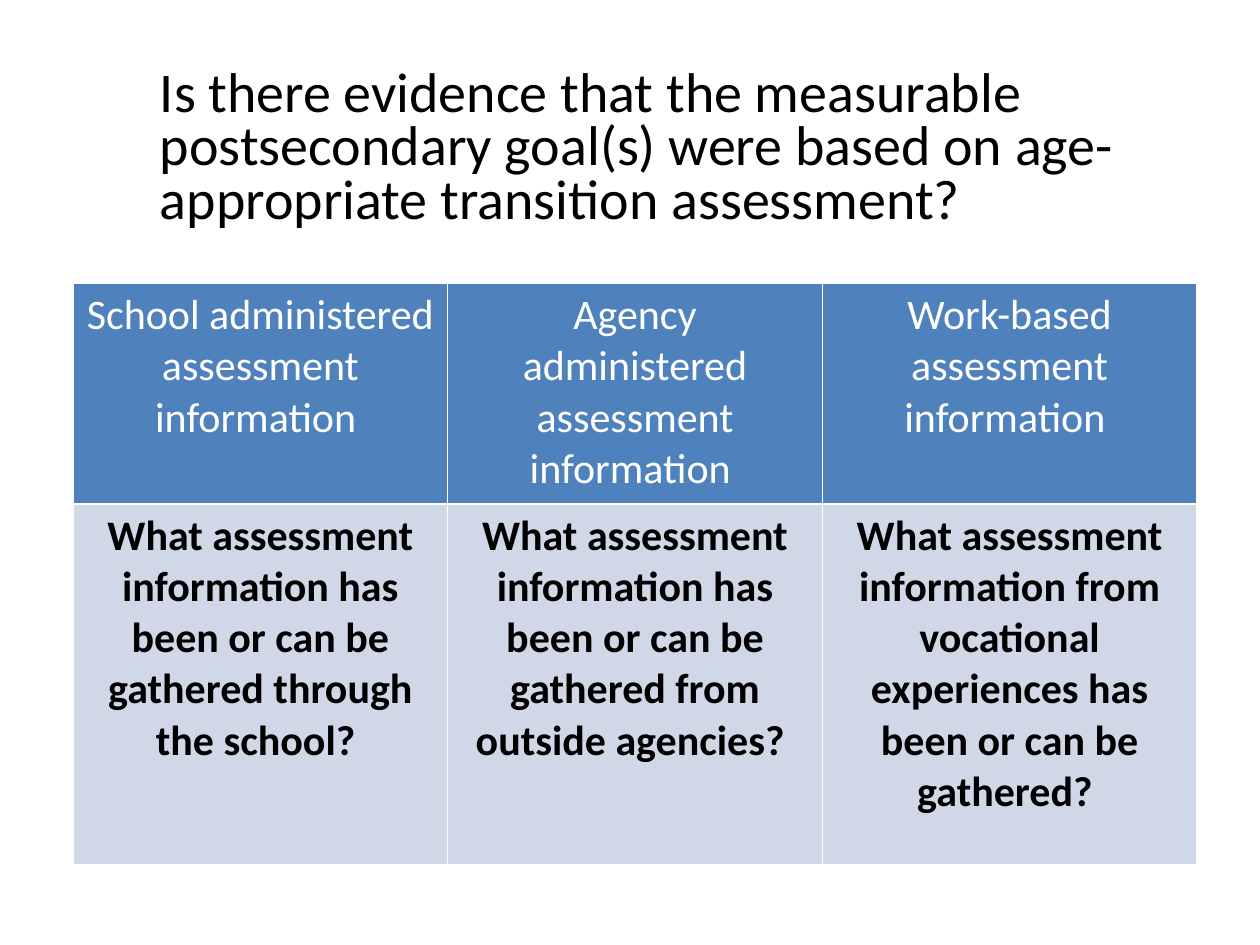
from dataclasses import dataclass

from lxml import etree
from pptx import Presentation
from pptx import util as u
from pptx.dml.color import RGBColor
from pptx.enum import text
from pptx.oxml import ns


@dataclass(frozen=True)
class Theme:
    font: str = "Calibri"
    title_size: int = 32
    cell_size: int = 24
    ink: str = "000000"
    paper: str = "FFFFFF"
    header: str = "4F81BD"
    body: str = "D0D8E8"
    border: float = 1


class SlideBuilder:
    """Draws themed elements on the current slide."""

    def __init__(self, prs, theme):
        self.theme = theme
        self.s = prs.slides.add_slide(prs.slide_layouts[6])

    def style(self, p, size, color, bold=False):
        f = p.font
        f.name, f.size, f.bold = self.theme.font, u.Pt(size), bold
        f.color.rgb = RGBColor.from_string(color)

    def title(self, words, left, top, width, height):
        sp = self.s.shapes.add_textbox(*map(u.Inches, (left, top, width, height)))
        tf = sp.text_frame
        tf.word_wrap = True
        tf.margin_left = u.Inches(0.77)
        p = tf.paragraphs[0]
        p.text = words
        p.line_spacing, p.space_before = 0.8, u.Pt(5.8)
        self.style(p, self.theme.title_size, self.theme.ink)

    def border(self, cell):
        tc_pr = cell._tc.get_or_add_tcPr()
        for i, side in enumerate(("lnL", "lnR", "lnT", "lnB")):
            ln = etree.Element(ns.qn(f"a:{side}"), w=str(u.Pt(self.theme.border)))
            fill = etree.SubElement(ln, ns.qn("a:solidFill"))
            etree.SubElement(fill, ns.qn("a:srgbClr"), val=self.theme.paper)
            tc_pr.insert(i, ln)

    def cell(self, cell, words, fill, color, bold):
        cell.fill.solid()
        cell.fill.fore_color.rgb = RGBColor.from_string(fill)
        p = cell.text_frame.paragraphs[0]
        p.text = words
        p.alignment = text.PP_ALIGN.CENTER
        self.style(p, self.theme.cell_size, color, bold)
        self.border(cell)

    def table(self, rows, left, top, width, heights):
        t = self.theme
        looks = ((t.header, t.paper, False), (t.body, t.ink, True))
        box = map(u.Inches, (left, top, width, sum(heights)))
        tbl = self.s.shapes.add_table(len(rows), len(rows[0]), *box).table
        for r, (row, height, look) in enumerate(zip(rows, heights, looks)):
            tbl.rows[r].height = u.Inches(height)
            for c, words in enumerate(row):
                self.cell(tbl.cell(r, c), words, *look)


def main():
    prs = Presentation()
    prs.slide_width, prs.slide_height = u.Inches(10), u.Inches(7.5)
    slide = SlideBuilder(prs, Theme())
    slide.title(
        "Is there evidence that the measurable postsecondary goal(s) were based "
        "on age-appropriate transition assessment?",
        0.5, 0.5, 8.83, 1.58,
    )
    headers = [
        f"{source} assessment information "
        for source in ("School administered", "Agency administered", "Work-based")
    ]
    questions = [
        f"What assessment information {rest}? "
        for rest in (
            "has been or can be gathered through the school",
            "has been or can be gathered from outside agencies",
            "from vocational experiences has been or can be gathered",
        )
    ]
    slide.table([headers, questions], 0.58, 2.25, 8.92, (1.75, 2.86))
    prs.save("out.pptx")


if __name__ == "__main__":
    main()
